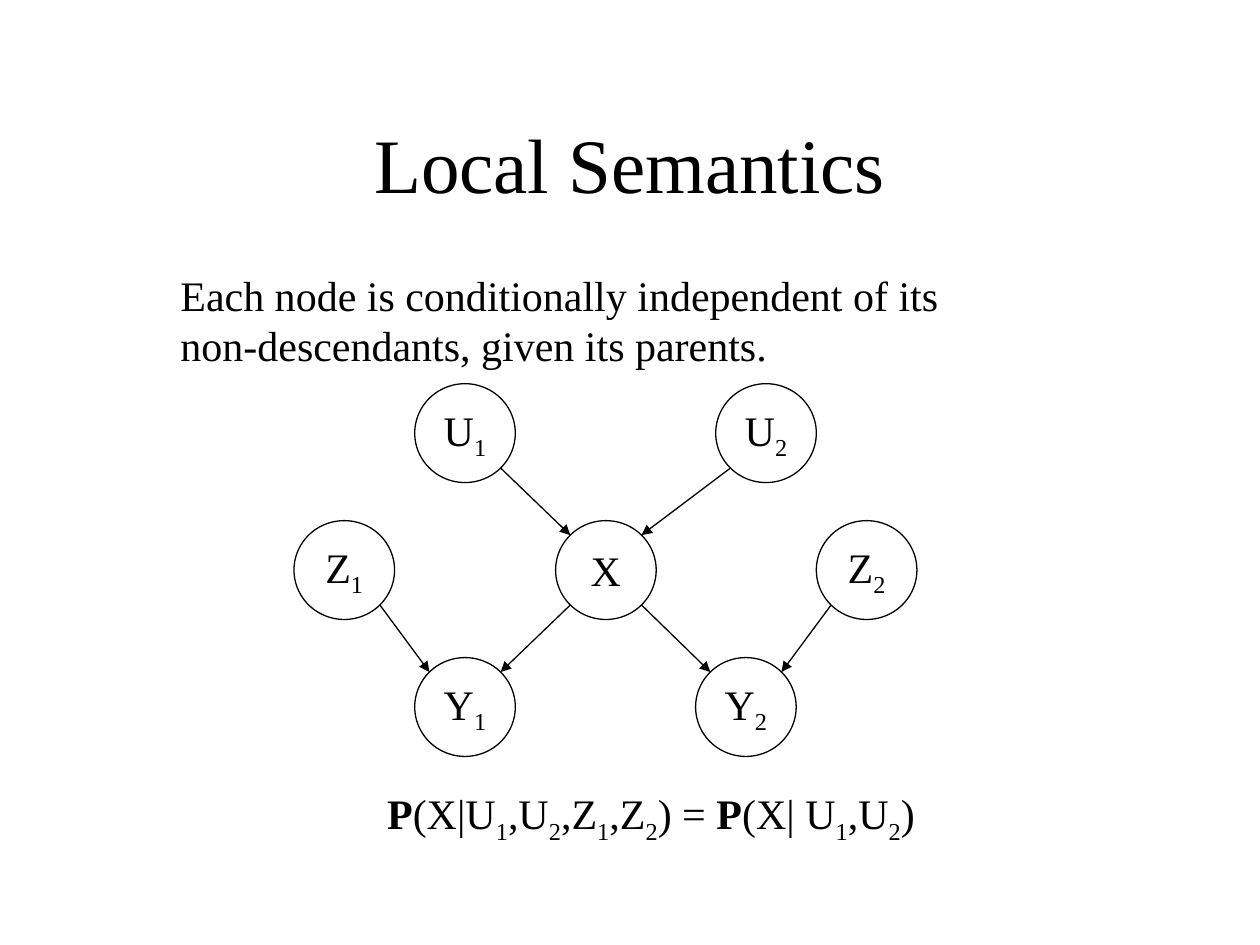
from math import sqrt

from lxml.etree import SubElement
from pptx import Presentation
from pptx.dml.color import RGBColor
from pptx.enum.shapes import MSO_CONNECTOR, MSO_SHAPE
from pptx.enum.text import MSO_ANCHOR, PP_ALIGN
from pptx.oxml.ns import qn
from pptx.util import Pt

FONT = "Times New Roman"
BLACK, WHITE = "000000", "FFFFFF"

TITLE = "Local Semantics"
STATEMENT = "Each node is conditionally independent of its\nnon-descendants, given its parents."
# In marked text, * switches bold on and off and _ lowers the next character.
FORMULA = "*P*(X|U_1,U_2,Z_1,Z_2) = *P*(X| U_1,U_2)"

# Node label: (left in points, row)
NODES = {
    "U_1": (237, 0), "U_2": (409, 0), "X": (317.5, 1), "Z_1": (168, 1),
    "Y_1": (237, 2), "Z_2": (466.5, 1), "Y_2": (397.5, 2),
}
EDGES = [("U_1", "X"), ("U_2", "X"), ("X", "Y_1"), ("X", "Y_2"), ("Z_1", "Y_1"), ("Z_2", "Y_2")]
NODE_WIDTH, NODE_HEIGHT = 57.5, 56.5
FIRST_ROW, ROW_STEP = 219.25, 78.25


def color(hex_string):
    return RGBColor.from_string(hex_string)


def split_marks(text):
    """Yield (text, bold, subscript) for each stretch of equal format."""
    for index, stretch in enumerate(text.split("*")):
        bold = index % 2 == 1
        first, *rest = stretch.split("_")
        yield first, bold, False
        for part in rest:
            yield part[0], bold, True
            yield part[1:], bold, False


def write_text(shape, text, size=24, align=PP_ALIGN.CENTER, anchor=MSO_ANCHOR.TOP,
               space_before=0, line_spacing=None, insets=(7.2, 3.6)):
    frame = shape.text_frame
    frame.word_wrap = True
    frame.vertical_anchor = anchor
    frame.margin_left = frame.margin_right = Pt(insets[0])
    frame.margin_top = frame.margin_bottom = Pt(insets[1])
    paragraph = frame.paragraphs[0]
    paragraph.alignment = align
    paragraph.space_before = Pt(space_before)
    if line_spacing:
        paragraph.line_spacing = Pt(line_spacing)
    for number, line in enumerate(text.split("\n")):
        if number:
            paragraph.add_line_break()
        for words, bold, subscript in split_marks(line):
            if not words:
                continue
            run = paragraph.add_run()
            run.text = words
            run.font.name = FONT
            run.font.size = Pt(size)
            run.font.bold = bold
            run.font.color.rgb = color(BLACK)
            if subscript:
                run._r.get_or_add_rPr().set("baseline", "-25000")


def add_text(slide, text, left, top, width, height, **text_format):
    box = slide.shapes.add_textbox(Pt(left), Pt(top), Pt(width), Pt(height))
    write_text(box, text, **text_format)


def node_top(row):
    return FIRST_ROW + row * ROW_STEP


def add_node(group, label):
    left, row = NODES[label]
    node = group.shapes.add_shape(
        MSO_SHAPE.OVAL, Pt(left), Pt(node_top(row)), Pt(NODE_WIDTH), Pt(NODE_HEIGHT))
    node.shadow.inherit = False
    node.fill.solid()
    node.fill.fore_color.rgb = color(WHITE)
    node.line.color.rgb = color(BLACK)
    node.line.width = Pt(0.75)
    write_text(node, label, anchor=MSO_ANCHOR.MIDDLE, insets=(5.75, 2.9))


def diagonal_point(label, horizontal, vertical):
    """Return the point of a node's outline at 45 degrees towards the given signs."""
    left, row = NODES[label]
    x = left + NODE_WIDTH / 2 * (1 + horizontal / sqrt(2))
    y = node_top(row) + NODE_HEIGHT / 2 * (1 + vertical / sqrt(2))
    return Pt(x), Pt(y)


def add_arrow(group, parent, child):
    direction = 1 if NODES[child][0] > NODES[parent][0] else -1
    arrow = group.shapes.add_connector(
        MSO_CONNECTOR.STRAIGHT,
        *diagonal_point(parent, direction, 1), *diagonal_point(child, -direction, -1))
    arrow.line.color.rgb = color(BLACK)
    arrow.line.width = Pt(0.75)
    SubElement(arrow.line._get_or_add_ln(), qn("a:tailEnd"), type="triangle")
    SubElement(arrow._element.spPr, qn("a:effectLst"))


def main():
    presentation = Presentation()
    presentation.slide_width, presentation.slide_height = Pt(720), Pt(540)
    slide = presentation.slides.add_slide(presentation.slide_layouts[6])

    add_text(slide, TITLE, 54, 48, 612, 90, size=44, anchor=MSO_ANCHOR.MIDDLE)
    add_text(slide, STATEMENT, 96, 150, 528, 63, align=PP_ALIGN.LEFT,
             space_before=3, line_spacing=29)
    network = slide.shapes.add_group_shape()
    for label in NODES:
        add_node(network, label)
    for parent, child in EDGES:
        add_arrow(network, parent, child)
    add_text(slide, FORMULA, 108, 446.5, 528, 39.5, space_before=3)

    presentation.save("out.pptx")


if __name__ == "__main__":
    main()
